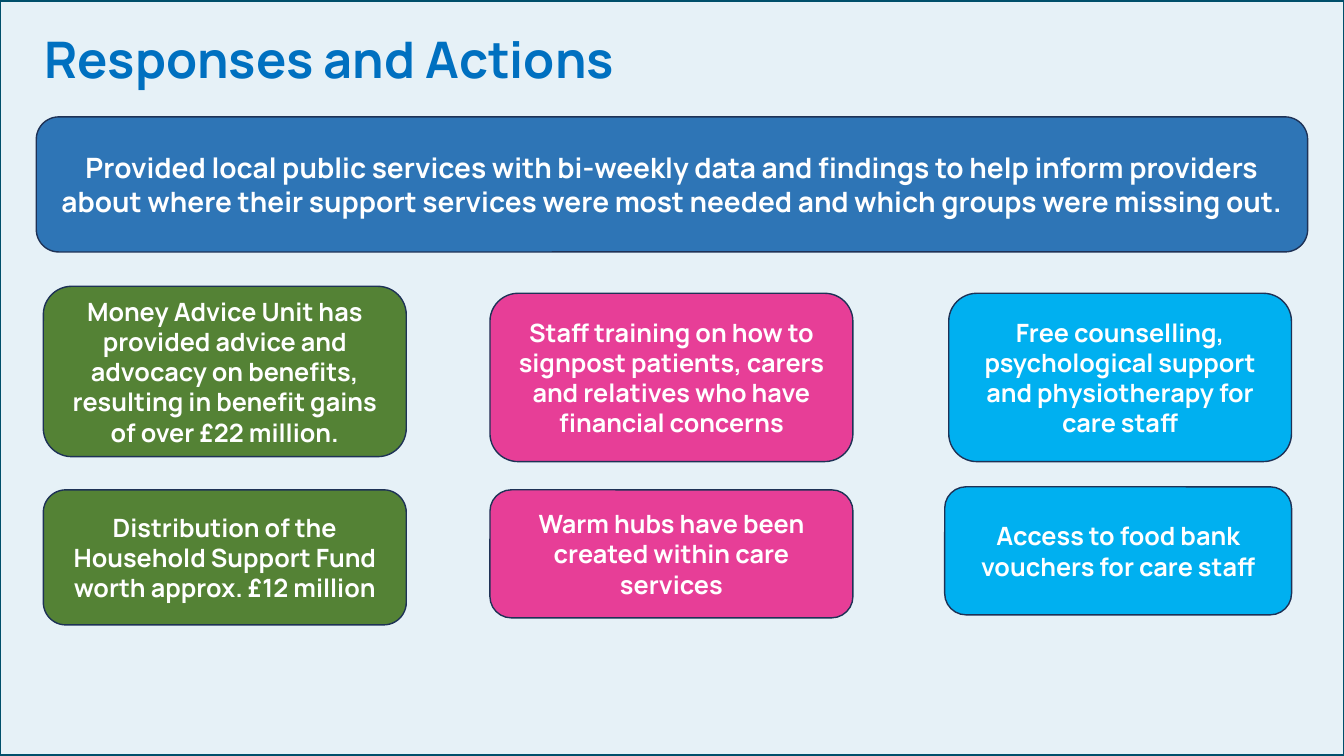
from dataclasses import dataclass

from pptx import Presentation
from pptx.dml.color import RGBColor
from pptx.enum.shapes import MSO_SHAPE as Shape
from pptx.enum.text import MSO_ANCHOR as Anchor, MSO_AUTO_SIZE as AutoSize, PP_ALIGN as Align
from pptx.util import Pt

EMU_PER_PX = 9144  # 100 px to the inch


@dataclass(frozen=True)
class Theme:
    font: str = "Manrope"
    background: str = "E6F1F7"
    frame: str = "004F6B"
    title: str = "0070C0"
    outline: str = "1E3256"
    text: str = "FFFFFF"
    blue: str = "2E75B6"
    green: str = "548235"
    pink: str = "E73E97"
    sky: str = "00B0F0"
    title_size: int = 36
    banner_size: int = 20
    card_size: int = 18


THEME = Theme()

BANNER = (
    "Provided local public services with bi-weekly data and findings to help inform "
    "providers about where their support services were most needed and which groups "
    "were missing out."
)

# Each column: fill, then cards as (box, text)
COLUMNS = [
    (THEME.green, [
        ((43, 284, 360, 169), "Money Advice Unit has provided advice and advocacy on "
                              "benefits, resulting in benefit gains of over £22 million."),
        ((43, 486, 360, 134), "Distribution of the Household Support Fund worth "
                              "approx. £12 million"),
    ]),
    (THEME.pink, [
        ((486, 291, 360, 167), "Staff training on how to signpost patients, carers and "
                               "relatives who have financial concerns"),
        ((486, 486, 360, 127), "Warm hubs have been created within care services"),
    ]),
    (THEME.sky, [
        ((941, 291, 340, 167), "Free counselling, psychological support and "
                               "physiotherapy for care staff"),
        ((937, 483, 344, 127), "Access to food bank vouchers for care staff"),
    ]),
]


def px(value):
    return value * EMU_PER_PX


def color(value):
    return RGBColor.from_string(value)


def write(text_frame, text, *, size, fill=THEME.text, align=Align.CENTER, anchor=Anchor.MIDDLE):
    text_frame.word_wrap = True
    text_frame.vertical_anchor = anchor
    paragraph = text_frame.paragraphs[0]
    paragraph.alignment = align
    run = paragraph.add_run()
    run.text = text
    run.font.name = THEME.font
    run.font.size = Pt(size)
    run.font.bold = True
    run.font.color.rgb = color(fill)


def add_box(slide, kind, box, *, line, line_width, fill=None):
    shape = slide.shapes.add_shape(kind, *map(px, box))
    shape.shadow.inherit = False
    if fill:
        shape.fill.solid()
        shape.fill.fore_color.rgb = color(fill)
    else:
        shape.fill.background()
    shape.line.color.rgb = color(line)
    shape.line.width = Pt(line_width)
    return shape


def add_card(slide, box, text, *, fill, size=THEME.card_size):
    card = add_box(slide, Shape.ROUNDED_RECTANGLE, box,
                   line=THEME.outline, line_width=1, fill=fill)
    write(card.text_frame, text, size=size)


def set_title(slide, box, text):
    title = slide.shapes.title
    title.left, title.top, title.width, title.height = map(px, box)
    text_frame = title.text_frame
    text_frame.auto_size = AutoSize.NONE
    text_frame.margin_left = text_frame.margin_right = px(16)
    text_frame.margin_top = text_frame.margin_bottom = px(12)
    write(text_frame, text, size=THEME.title_size, fill=THEME.title,
          align=Align.LEFT, anchor=Anchor.TOP)


def main():
    presentation = Presentation()
    presentation.slide_width = px(1333)
    presentation.slide_height = px(750)
    slide = presentation.slides.add_slide(presentation.slide_layouts[5])

    # Background and frame
    slide.background.fill.solid()
    slide.background.fill.fore_color.rgb = color(THEME.background)
    add_box(slide, Shape.RECTANGLE, (-1, 0, 1335, 750), line=THEME.frame, line_width=3)

    # Title and banner
    set_title(slide, (28, 16, 1161, 84), "Responses and Actions")
    add_card(slide, (36, 116, 1261, 134), BANNER, fill=THEME.blue, size=THEME.banner_size)

    # Action cards
    for fill, cards in COLUMNS:
        for box, text in cards:
            add_card(slide, box, text, fill=fill)

    presentation.save("out.pptx")


if __name__ == "__main__":
    main()
